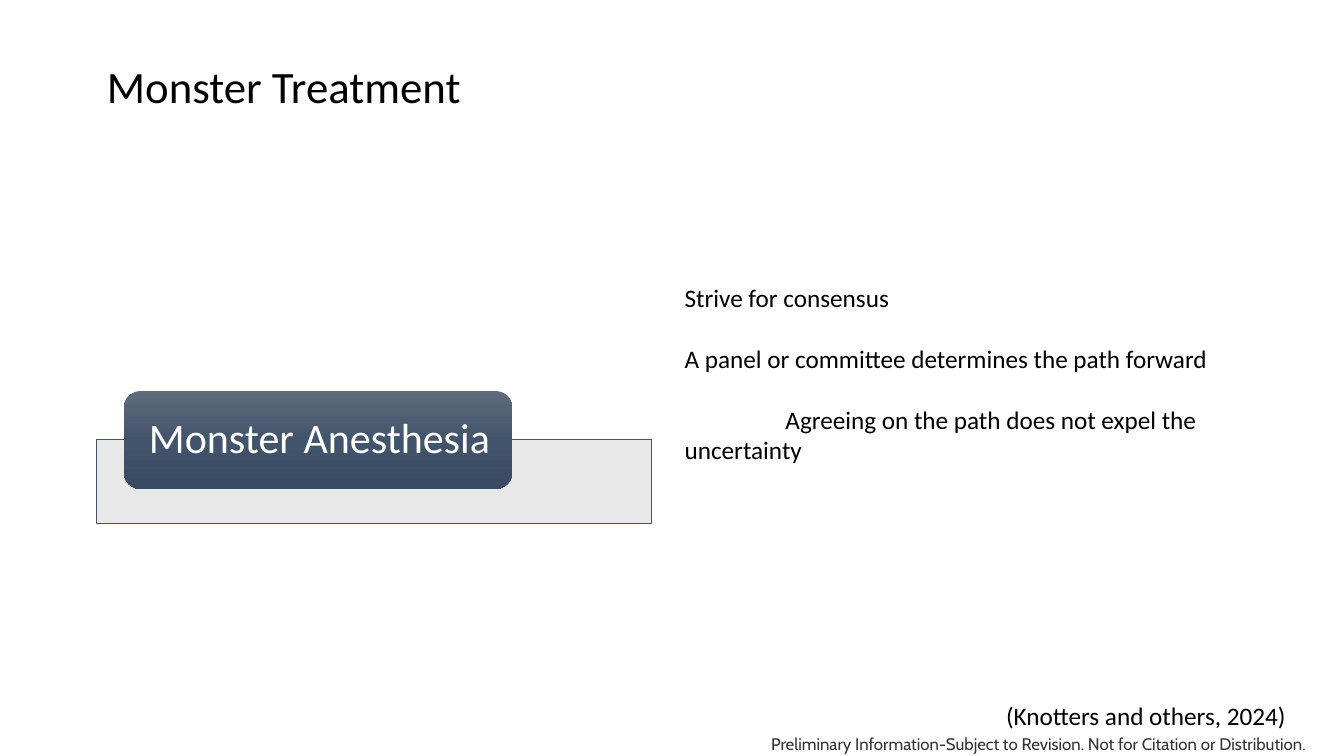
from copy import deepcopy

from lxml import etree
from pptx import Presentation
from pptx.dml.color import RGBColor
from pptx.enum.shapes import MSO_SHAPE
from pptx.enum.text import MSO_ANCHOR, PP_ALIGN
from pptx.oxml.ns import qn
from pptx.util import Inches, Pt

BLACK = RGBColor(0x00, 0x00, 0x00)
WHITE = RGBColor(0xFF, 0xFF, 0xFF)
NOTICE_GRAY = RGBColor(0x33, 0x33, 0x33)
BAND_GRAY = RGBColor(0xE7, 0xE6, 0xE6)
SLATE = RGBColor(0x44, 0x54, 0x6A)
LABEL_STOPS = [
    (0, RGBColor(0x60, 0x6B, 0x7D)),
    (0.5, RGBColor(0x42, 0x54, 0x6C)),
    (1, RGBColor(0x39, 0x4A, 0x62)),
]
RECTANGLE = MSO_SHAPE.RECTANGLE
ROUNDED = MSO_SHAPE.ROUNDED_RECTANGLE
TOP, MIDDLE = MSO_ANCHOR.TOP, MSO_ANCHOR.MIDDLE
LEFT = PP_ALIGN.LEFT

TITLE_FORMAT = {"name": "Calibri", "size": Pt(32), "color": BLACK}
LABEL_FORMAT = {"name": "Calibri", "size": Pt(30), "color": WHITE}
BODY_FORMAT = {"name": "Calibri", "size": Pt(18), "color": BLACK}
NOTICE_FORMAT = {"name": "Cabin", "size": Pt(12), "color": NOTICE_GRAY}

POINTS = [
    ("Strive for consensus", 0),
    ("A panel or committee determines the path forward", 0),
    ("Agreeing on the path does not expel the uncertainty", 1),
]


def place(shape, box):
    """Move a shape to a box of left, top, width and height in inches."""
    for name, value in zip(("left", "top", "width", "height"), box):
        setattr(shape, name, Inches(value))


def write(para, text, format_values):
    """Put one formatted, left-aligned span of text in a paragraph."""
    para.alignment = LEFT
    span = para.add_run()
    span.text = text
    for name, value in format_values.items():
        if name == "color":
            span.font.color.rgb = value
        else:
            setattr(span.font, name, value)


def add_title(page, box):
    """Fill the title placeholder."""
    title = page.shapes.title
    place(title, box)
    title.text_frame.vertical_anchor = MIDDLE
    para = title.text_frame.paragraphs[0]
    para.line_spacing = 0.9
    write(para, "Monster Treatment", TITLE_FORMAT)


def add_points(page, box):
    """Fill the body placeholder with unbulleted points."""
    body = page.placeholders[1]
    place(body, box)
    frame = body.text_frame
    frame.vertical_anchor = TOP
    for index, (text, indent) in enumerate(POINTS):
        para = frame.paragraphs[0] if index == 0 else frame.add_paragraph()
        para.space_before = Pt(22 if index else 0)
        properties = para._p.get_or_add_pPr()
        properties.set("marL", "0")
        properties.set("indent", str(Inches(indent)))
        etree.SubElement(properties, qn("a:buNone"))
        write(para, text, BODY_FORMAT)


def add_block(page, kind, box):
    """Add a preset shape without a shadow."""
    left, top, width, height = map(Inches, box)
    block = page.shapes.add_shape(kind, left, top, width, height)
    block.shadow.inherit = False
    return block


def add_treatment(page, box):
    """Draw the pale band and the gradient label that overlaps its top edge."""
    left, top, width, height = box
    band = add_block(page, RECTANGLE, (left, top + 0.48, width, height - 0.48))
    band.fill.solid()
    band.fill.fore_color.rgb = BAND_GRAY
    color = band.element.spPr.find(qn("a:solidFill")).find(qn("a:srgbClr"))
    etree.SubElement(color, qn("a:alpha"), val="90000")
    band.line.color.rgb = SLATE
    band.line.width = Pt(0.5)

    label = add_block(page, ROUNDED, (left + 0.27, top, width * 0.7, 0.97))
    label.line.fill.background()
    label.fill.gradient()
    label.fill.gradient_angle = 270
    stop_list = label.element.spPr.find(qn("a:gradFill")).find(qn("a:gsLst"))
    stop_list.append(deepcopy(stop_list[0]))
    for stop, (position, color) in zip(label.fill.gradient_stops, LABEL_STOPS):
        stop.position = position
        stop.color.rgb = color
    frame = label.text_frame
    frame.word_wrap = True
    frame.vertical_anchor = MIDDLE
    frame.margin_left = Inches(0.2)
    frame.margin_right = frame.margin_top = frame.margin_bottom = 0
    para = frame.paragraphs[0]
    para.line_spacing = 0.9
    write(para, "Monster Anesthesia", LABEL_FORMAT)


def add_note(page, box, text, format_values, line_spacing):
    """Add a one-line text box."""
    note = page.shapes.add_textbox(*map(Inches, box))
    note.text_frame.word_wrap = True
    para = note.text_frame.paragraphs[0]
    para.line_spacing = line_spacing
    write(para, text, format_values)


def main():
    """Build the slide and save the deck."""
    deck = Presentation()
    deck.slide_width, deck.slide_height = Inches(13.33), Inches(7.5)
    page = deck.slides.add_slide(deck.slide_layouts[1])
    add_title(page, (0.96, 0.33, 11.46, 1.1))
    add_treatment(page, (0.96, 3.88, 5.5, 1.31))
    add_points(page, (6.69, 2.75, 6.2, 2.22))
    add_note(page, (9.88, 6.88, 3.3, 0.41),
             "(Knotters and others, 2024)", BODY_FORMAT, 1.07)
    add_note(page, (7.55, 7.23, 5.7, 0.3),
             "Preliminary Information-Subject to Revision. "
             "Not for Citation or Distribution.", NOTICE_FORMAT, 1.0)
    deck.save("out.pptx")


if __name__ == "__main__":
    main()
